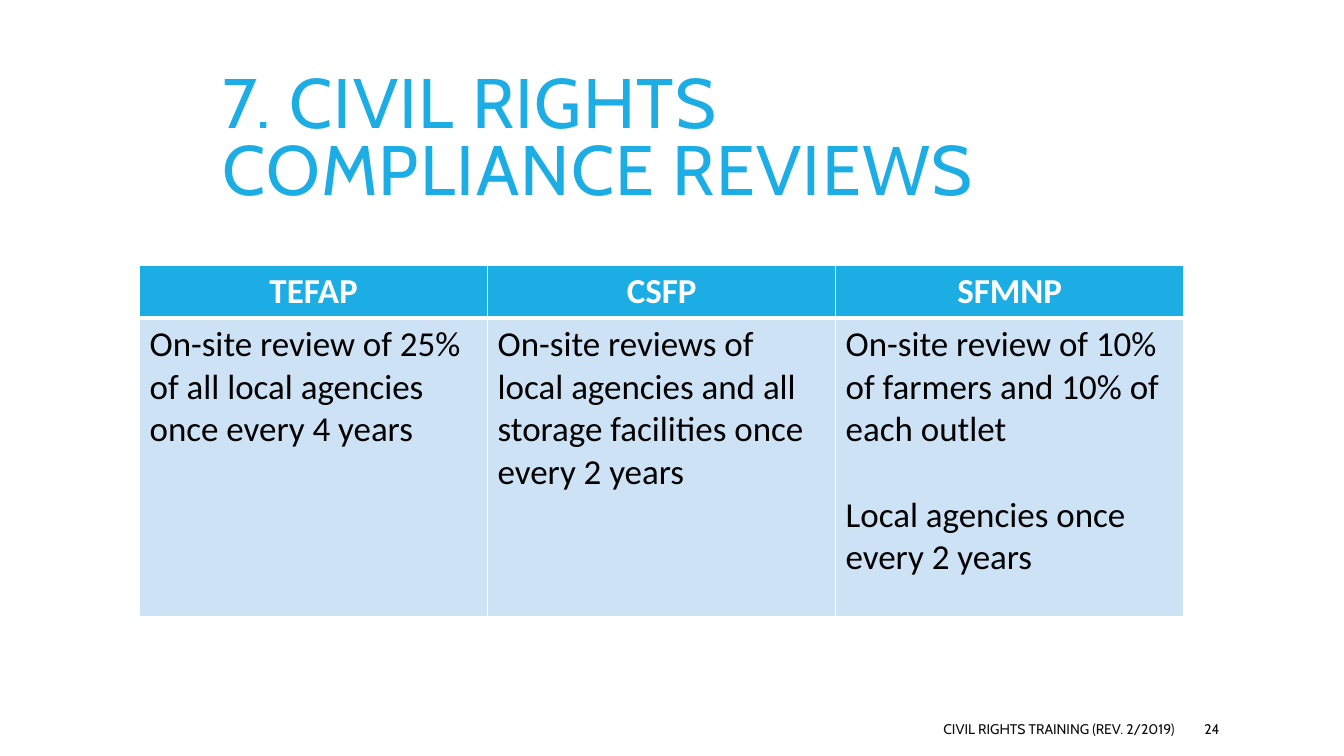
from pptx import Presentation
from pptx.dml.color import RGBColor
from pptx.enum.text import MSO_ANCHOR, MSO_AUTO_SIZE, PP_ALIGN
from pptx.oxml.xmlchemy import OxmlElement
from pptx.util import Pt

COLORS = {"blue": "1CADE4", "pale": "CDE3F5", "white": "FFFFFF",
          "black": "000000", "dark": "0D0D0D"}

REVIEWS = [
    ("TEFAP", "On-site review of 25% of all local agencies once every 4 years"),
    ("CSFP", "On-site reviews of local agencies and all storage facilities "
             "once every 2 years"),
    ("SFMNP", "On-site review of 10% of farmers and 10% of each outlet\n"
              "Local agencies once every 2 years"),
]


def color(name):
    return RGBColor.from_string(COLORS[name])


def style(frame, font, size, tint, align, bold=False):
    for para in frame.paragraphs:
        para.alignment = align
        for run in para.runs:
            run.font.name = font
            run.font.size = Pt(size)
            run.font.bold = bold
            run.font.color.rgb = color(tint)


def place(shape, box):
    shape.left, shape.top, shape.width, shape.height = map(Pt, box)


def border(cell, widths):
    props = cell._tc.get_or_add_tcPr()
    for side, width in zip("LRTB", widths):
        line = OxmlElement(f"a:ln{side}")
        line.set("w", str(Pt(width)))
        fill = OxmlElement("a:solidFill")
        tint = OxmlElement("a:srgbClr")
        tint.set("val", COLORS["white"])
        fill.append(tint)
        line.append(fill)
        props.append(line)


def add_title(slide, box, text):
    title = slide.shapes.title
    place(title, box)
    frame = title.text_frame
    frame.text = text
    frame.word_wrap = True
    frame.auto_size = MSO_AUTO_SIZE.NONE
    frame.vertical_anchor = MSO_ANCHOR.MIDDLE
    style(frame, "Cabin", 50, "blue", PP_ALIGN.LEFT)
    para = frame.paragraphs[0]
    para.line_spacing = 0.8
    para.runs[0].font._element.set("spc", "100")


def add_grid(slide, box, reviews, head):
    x, y, width, height = box
    grid = slide.shapes.add_table(2, len(reviews), *map(Pt, box)).table
    grid.rows[0].height = Pt(head)
    grid.rows[1].height = Pt(height - head)
    looks = [("blue", "white", PP_ALIGN.CENTER, True, (1, 1, 1, 3)),
             ("pale", "black", PP_ALIGN.LEFT, False, (1, 1, 3, 1))]
    for col, texts in enumerate(reviews):
        grid.columns[col].width = Pt(width / len(reviews))
        for row, (fill, tint, align, bold, widths) in enumerate(looks):
            cell = grid.cell(row, col)
            border(cell, widths)
            cell.fill.solid()
            cell.fill.fore_color.rgb = color(fill)
            cell.text_frame.text = texts[row]
            style(cell.text_frame, "Calibri", 25, tint, align, bold)
            for para in cell.text_frame.paragraphs[1:]:
                para.space_before = Pt(30.5)


def add_note(slide, box, text, align):
    frame = slide.shapes.add_textbox(*map(Pt, box)).text_frame
    frame.word_wrap = True
    frame.vertical_anchor = MSO_ANCHOR.MIDDLE
    frame.text = text
    style(frame, "Cabin", 10, "dark", align)


def add_foot(slide, box, text, page):
    x, y, width, height = box
    split, gap = 464.4, 7.2
    add_note(slide, (x, y, split, height), text, PP_ALIGN.RIGHT)
    add_note(slide, (x + split + gap, y, width - split - gap, height),
             page, PP_ALIGN.LEFT)


def main():
    deck = Presentation()
    deck.slide_width, deck.slide_height = Pt(960), Pt(540)
    slide = deck.slides.add_slide(deck.slide_layouts[5])
    add_title(slide, (152, 42.5, 610.5, 118),
              "7. CIVIL RIGHTS COMPLIANCE REVIEWS")
    add_grid(slide, (99.7, 189.5, 745.8, 250.5), REVIEWS, 37.5)
    add_foot(slide, (381.6, 509.8, 547.9, 21.6),
             "CIVIL RIGHTS TRAINING (REV. 2/2019)", "24")
    deck.save("out.pptx")


if __name__ == "__main__":
    main()
